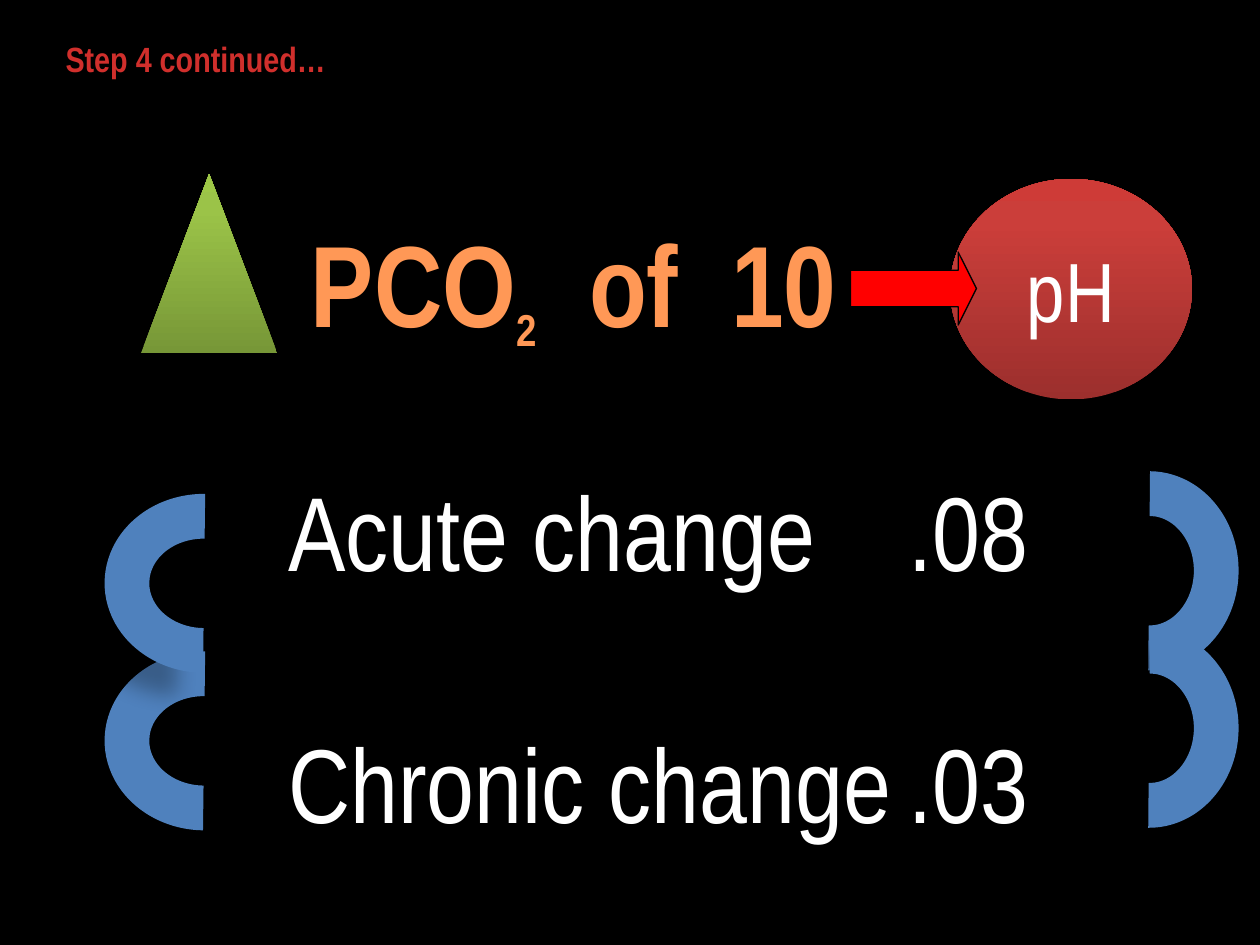
from pptx import Presentation
from pptx.dml.color import RGBColor
from pptx.enum.shapes import MSO_SHAPE
from pptx.enum.text import MSO_ANCHOR, MSO_AUTO_SIZE, PP_ALIGN
from pptx.oxml.ns import qn
from pptx.util import Inches, Pt
from lxml.etree import SubElement


def paint(color, code):
    """Set a fill or font colour from a hex string."""
    color.rgb = RGBColor.from_string(code)


def solid(fill, code):
    """Give a fill one colour."""
    fill.solid()
    paint(fill.fore_color, code)


def blend(fill, owner, angle, stops):
    """Give a fill a gradient of (percent, hex) stops."""
    fill.gradient()
    fill.gradient_angle = angle
    marks = owner.find(".//" + qn("a:gsLst"))
    for mark in list(marks):
        marks.remove(mark)
    for pos, code in stops:
        mark = SubElement(marks, qn("a:gs"), pos=str(pos * 1000))
        SubElement(mark, qn("a:srgbClr"), val=code)


def shade(shape, alpha, blur, dist, angle):
    """Add a soft black outer shadow."""
    shape.shadow.inherit = False
    effects = shape._element.spPr.find(qn("a:effectLst"))
    outer = SubElement(effects, qn("a:outerShdw"), blurRad=str(Pt(blur)),
                       dist=str(Pt(dist)), dir=str(angle * 60000),
                       algn="ctr", rotWithShape="0")
    tone = SubElement(outer, qn("a:srgbClr"), val="000000")
    SubElement(tone, qn("a:alpha"), val=str(alpha * 1000))


def style(run, size, bold=False):
    """Set the face, size and weight of a run."""
    run.font.name = "Arial Narrow"
    run.font.size = Pt(size)
    run.font.bold = bold


def fit(frame):
    """Let a text frame run from its top left without wrapping."""
    frame.word_wrap = False
    frame.auto_size = MSO_AUTO_SIZE.SHAPE_TO_FIT_TEXT
    frame.vertical_anchor = MSO_ANCHOR.TOP


def place(slide, kind, x, y, w, h):
    """Add a preset shape with no outline and no shadow."""
    shape = slide.shapes.add_shape(kind, Inches(x), Inches(y), Inches(w), Inches(h))
    shape.line.fill.background()
    shape.shadow.inherit = False
    return shape


def head(slide, x, y, w, h):
    """Place the slide title."""
    title = slide.shapes.title
    title.left, title.top = Inches(x), Inches(y)
    title.width, title.height = Inches(w), Inches(h)
    frame = title.text_frame
    frame.text = "Step 4 continued…"
    fit(frame)
    frame.paragraphs[0].alignment = PP_ALIGN.LEFT
    run = frame.paragraphs[0].runs[0]
    style(run, 20, True)
    blend(run.font.fill, run._r, 270, [(0, "FC7C7A"), (75, "D02F2C"), (100, "C70500")])


def cause(slide, x, y, w, h):
    """Place the delta triangle and the PCO2 phrase."""
    delta = place(slide, MSO_SHAPE.ISOSCELES_TRIANGLE, x, y, 1.08, 1.42)
    blend(delta.fill, delta._element.spPr, 90,
          [(0, "779737"), (80, "9BC348"), (100, "9DC746")])
    shade(delta, 32, 3.5, 2.2, 90)
    box = slide.shapes.add_textbox(Inches(x + 1.25), Inches(y + 0.25),
                                   Inches(w - 1.25), Inches(h - 0.25))
    fit(box.text_frame)
    line = box.text_frame.paragraphs[0]
    for text, size in [("PCO", 66), ("2", 44), ("  of  10", 66)]:
        run = line.add_run()
        run.text = text
        style(run, size, True)
        blend(run.font.fill, run._r, 270,
              [(0, "9D4700"), (78, "FF9856"), (100, "FFF5F1")])
        if text == "2":
            run.font._element.set("baseline", "-25000")


def effect(slide, x, y, w, h):
    """Place the pH disc with the arrow that leads into it."""
    disc = place(slide, MSO_SHAPE.OVAL, x + 0.79, y, w - 0.79, h)
    blend(disc.fill, disc._element.spPr, 90,
          [(0, "9C2F2D"), (80, "CB3E3A"), (100, "CE3B37")])
    shade(disc, 28, 11.8, 19.7, 141)
    frame = disc.text_frame
    frame.text = "pH"
    frame.vertical_anchor = MSO_ANCHOR.MIDDLE
    frame.paragraphs[0].alignment = PP_ALIGN.CENTER
    run = frame.paragraphs[0].runs[0]
    style(run, 48)
    paint(run.font.color, "FFFFFF")
    arrow = place(slide, MSO_SHAPE.RIGHT_ARROW, x, y + 0.58, 1, 0.58)
    arrow.adjustments[1] = 0.25
    solid(arrow.fill, "FF0000")
    solid(arrow.line.fill, "000000")
    arrow.line.width = Pt(0.75)


def rates(slide, x, y, w, h):
    """Place the acute and chronic changes with aligned values."""
    box = slide.shapes.add_textbox(Inches(x), Inches(y), Inches(w), Inches(h))
    frame = box.text_frame
    frame.text = "Acute change\t.08\nChronic change\t.03"
    fit(frame)
    for line in frame.paragraphs:
        stops = SubElement(line._p.get_or_add_pPr(), qn("a:tabLst"))
        SubElement(stops, qn("a:tab"), pos=str(Inches(4.92)), algn="l")
        for run in line.runs:
            style(run, 60)
            paint(run.font.color, "FFFFFF")
    frame.paragraphs[1].space_before = Pt(72)


def brace(slide, x, tops, w, h, turn):
    """Stack turned half rings into one side bracket."""
    for top in tops:
        ring = place(slide, MSO_SHAPE.BLOCK_ARC, x, top, w, h)
        ring.rotation = turn
        solid(ring.fill, "4F81BD")
        shade(ring, 28, 11.8, 19.7, 141)


def main():
    """Build and save the slide."""
    deck = Presentation()
    deck.slide_width, deck.slide_height = Inches(10), Inches(7.5)
    slide = deck.slides.add_slide(deck.slide_layouts[5])
    solid(slide.background.fill, "000000")
    cause(slide, 1.12, 1.38, 5.69, 1.46)
    rates(slide, 2.19, 3.65, 6.19, 3.13)
    brace(slide, 8.33, (3.82, 5.07), 1.58, 1.42, 90.5)
    brace(slide, 0.91, (5.09, 3.84), 1.42, 1.58, 270.7)
    effect(slide, 6.75, 1.42, 2.71, 1.75)
    head(slide, 0.42, 0.25, 2.28, 0.44)
    deck.save("out.pptx")


if __name__ == "__main__":
    main()
